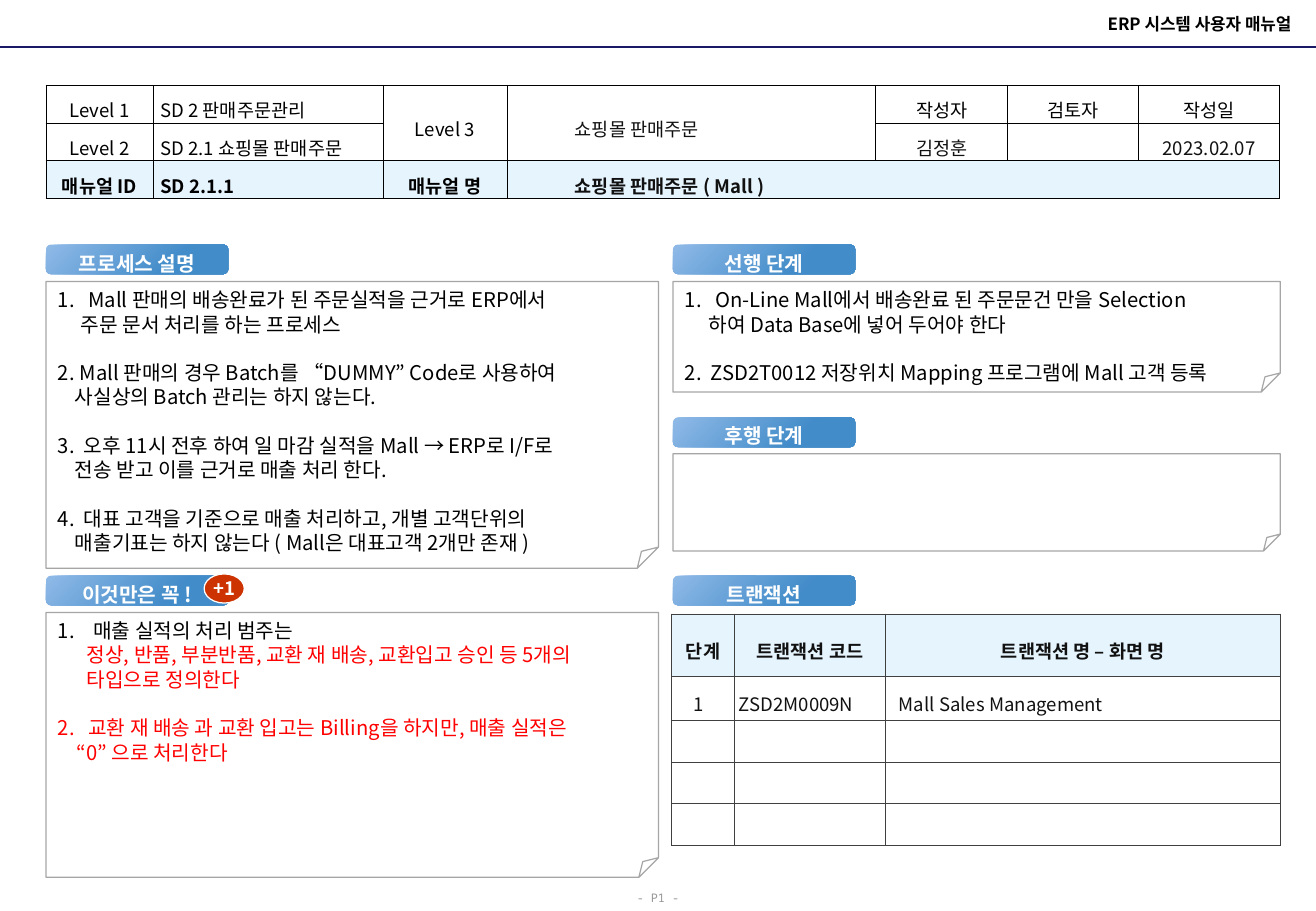
from lxml.etree import SubElement
from pptx import Presentation
from pptx.dml.color import RGBColor
from pptx.enum.shapes import MSO_CONNECTOR, MSO_SHAPE
from pptx.enum.text import MSO_ANCHOR, PP_ALIGN
from pptx.oxml.ns import qn
from pptx.oxml.xmlchemy import OxmlElement
from pptx.util import Pt

FONT, MONO = "Noto Sans CJK KR", "Noto Sans Mono"
COLORS = {"ink": "000000", "dark": "111111", "red": "FF0000", "white": "FFFFFF",
          "rule": "191966", "frame": "A6A6A6", "grid": "404040", "page": "969696",
          "tint": "E6F4FE", "tag_light": "90BAE8", "tag_deep": "428CC9", "badge": "CC3300"}
LEFT, CENTER, RIGHT = PP_ALIGN.LEFT, PP_ALIGN.CENTER, PP_ALIGN.RIGHT
LEFT_X, RIGHT_X, LEFT_W, RIGHT_W = 27.3, 398.9, 363, 360


def rgb(name):
    return RGBColor.from_string(COLORS[name])


def format_paragraph(p, size, color="ink", bold=False, align=LEFT, font=FONT, spacing=None):
    p.alignment = align
    if spacing:
        p.line_spacing = spacing
    for r in p.runs:
        r.font.size, r.font.bold = Pt(size), bold
        r.font.color.rgb = rgb(color)
        r.font.name = font
        SubElement(r.font._element, qn("a:ea"), typeface=font)


def set_margins(box, left, top, right, bottom):
    box.margin_left, box.margin_top = Pt(left), Pt(top)
    box.margin_right, box.margin_bottom = Pt(right), Pt(bottom)


def add_box(s, kind, x, y, w, h, line=None):
    sp = s.shapes.add_shape(kind, Pt(x), Pt(y), Pt(w), Pt(h))
    sp.shadow.inherit = False
    sp.fill.background()
    if line:
        sp.line.color.rgb = rgb(line)
        sp.line.width = Pt(0.75)
    else:
        sp.line.fill.background()
    return sp


def add_header(s):
    title = s.shapes.title
    title.left, title.top, title.width, title.height = Pt(434.9), Pt(4.3), Pt(337.7), Pt(19.4)
    tf = title.text_frame
    tf.text = "ERP 시스템 사용자 매뉴얼"
    tf.vertical_anchor = MSO_ANCHOR.MIDDLE
    format_paragraph(tf.paragraphs[0], 10, bold=True, align=RIGHT)
    rule = s.shapes.add_connector(MSO_CONNECTOR.STRAIGHT, 0, Pt(28), Pt(780), Pt(28))
    rule.line.color.rgb = rgb("rule")
    rule.line.width = Pt(1.5)
    SubElement(rule._element.spPr, qn("a:effectLst"))


def add_page_number(s):
    tf = s.shapes.add_textbox(Pt(370), Pt(522), Pt(40), Pt(18)).text_frame
    tf.word_wrap = True
    tf.text = "- P1 -"
    set_margins(tf, 0, 3.6, 0, 3.6)
    format_paragraph(tf.paragraphs[0], 7, "page", align=CENTER, font=MONO, spacing=1.3)


def add_tag(s, x, y, label):
    sp = add_box(s, MSO_SHAPE.ROUNDED_RECTANGLE, x, y, 108, 17.5)
    sp.fill.gradient()
    sp.fill.gradient_angle = 315
    for stop, color, position in zip(sp.fill.gradient_stops, ("tag_light", "tag_deep"), (0, 0.7)):
        stop.color.rgb = rgb(color)
        stop.position = position
    tf = sp.text_frame
    tf.text = label
    tf.vertical_anchor = MSO_ANCHOR.MIDDLE
    set_margins(tf, 0, 0, 0, 2.9)
    format_paragraph(tf.paragraphs[0], 12, "white", True, CENTER, spacing=1.5)


def add_badge(s, x, y, label):
    sp = add_box(s, MSO_SHAPE.OVAL, x, y, 23.8, 17.3, "white")
    sp.fill.solid()
    sp.fill.fore_color.rgb = rgb("badge")
    tf = sp.text_frame
    tf.text = label
    tf.word_wrap = False
    tf.vertical_anchor = MSO_ANCHOR.MIDDLE
    set_margins(tf, 0, 0, 0, 0)
    format_paragraph(tf.paragraphs[0], 11, "white", True, CENTER)


def add_note(s, x, y, w, h, fold, items=()):
    """Items are (text indent, indent of later lines, [(line, color), ...]), numbered from 1."""
    sp = add_box(s, MSO_SHAPE.FOLDED_CORNER, x, y, w, h, "frame")
    guides = sp._element.spPr.find(qn("a:prstGeom")).find(qn("a:avLst"))
    guides.clear()
    SubElement(guides, qn("a:gd"), name="adj", fmla=f"val {round(fold * 100000)}")
    tf = sp.text_frame
    tf.vertical_anchor = MSO_ANCHOR.TOP
    set_margins(tf, 7.2, 3.6, 7.2, 3.6)
    for number, (hang, later, lines) in enumerate(items, 1):
        for i, (line, color) in enumerate(lines):
            first = number == 1 and i == 0
            p = tf.paragraphs[0] if first else tf.add_paragraph()
            p.text = line
            pPr = p._p.get_or_add_pPr()
            pPr.set("marL", str(Pt(later if i else hang)))
            pPr.set("indent", str(0 if i else -Pt(hang)))
            if i == 0:
                SubElement(pPr, qn("a:buFont"), typeface=FONT)
                SubElement(pPr, qn("a:buAutoNum"), type="arabicPeriod", startAt=str(number))
                if not first:
                    p.space_before = Pt(14.4)
            format_paragraph(p, 12, color, spacing=Pt(14.4))


def add_borders(cell, color):
    tcPr = cell._tc.get_or_add_tcPr()
    for i, side in enumerate(("lnL", "lnR", "lnT", "lnB")):
        ln = OxmlElement(f"a:{side}")
        ln.set("w", str(Pt(0.5)))
        SubElement(SubElement(ln, qn("a:solidFill")), qn("a:srgbClr"), val=COLORS[color])
        tcPr.insert(i, ln)


def add_grid(s, x, y, cols, rows, border, tinted_row):
    table = s.shapes.add_table(len(rows), len(cols), Pt(x), Pt(y), Pt(sum(cols)), Pt(sum(rows))).table
    table.first_row = table.horz_banding = False
    for col, w in zip(table.columns, cols):
        col.width = Pt(w)
    for i, (row, h) in enumerate(zip(table.rows, rows)):
        row.height = Pt(h)
        for cell in row.cells:
            cell.fill.solid()
            cell.fill.fore_color.rgb = rgb("tint" if i == tinted_row else "white")
            add_borders(cell, border)
            set_margins(cell, 0, 0, 0, 0)
            SubElement(cell.text_frame.paragraphs[0]._p, qn("a:endParaRPr"), sz="1100")
    return table


def fill_cell(cell, text, align=CENTER, left=4.3, color="ink", bold=False, pad=(1.6, 0)):
    cell.text = text
    cell.vertical_anchor = MSO_ANCHOR.MIDDLE
    set_margins(cell, left, pad[0], 4.3, pad[1])
    format_paragraph(cell.text_frame.paragraphs[0], 11, color, bold, align, spacing=1.3)


def add_document_table(s, x, y):
    table = add_grid(s, x, y, (63.4, 136.3, 73.5, 218.7, 78.2, 77.6, 83.6), (19, 19, 22.6), "ink", 2)
    for column in (2, 3):
        table.cell(0, column).merge(table.cell(1, column))
    table.cell(2, 3).merge(table.cell(2, 6))
    rows = (("Level 1", "SD 2 판매주문관리", "Level 3", "쇼핑몰 판매주문", "작성자", "검토자", "작성일"),
            ("Level 2", "SD 2.1 쇼핑몰 판매주문", "", "", "김정훈", "", "2023.02.07"),
            ("매뉴얼 ID", "SD 2.1.1", "매뉴얼 명", "쇼핑몰 판매주문 ( Mall )"))
    for i, row in enumerate(rows):
        for j, text in enumerate(row):
            if text:
                dark = j == 3 or (i == 1 and j > 3)
                fill_cell(table.cell(i, j), text, LEFT if j in (1, 3) else CENTER,
                          40.3 if j == 3 else 4.3, "dark" if dark else "ink", i == 2)


def add_transaction_table(s, x, y):
    table = add_grid(s, x, y, (37.4, 89.5, 234), (36.7, 24.4, 24.7, 24.7, 24.7), "grid", 0)
    for j, text in enumerate(("단계", "트랜잭션 코드", "트랜잭션 명 – 화면 명")):
        fill_cell(table.cell(0, j), text, color="dark", bold=True, pad=(3.6, 2))
    for j, (text, left) in enumerate((("1", 12.9), ("ZSD2M0009N", 2.5), ("Mall Sales Management", 7.9))):
        fill_cell(table.cell(1, j), text, LEFT, left, "dark", pad=(3.6, 2))


def main():
    prs = Presentation()
    prs.slide_width, prs.slide_height = Pt(780), Pt(540)
    s = prs.slides.add_slide(prs.slide_layouts[5])
    add_header(s)
    add_document_table(s, LEFT_X, 50.5)
    for x, y, label in ((LEFT_X, 145, "프로세스 설명"), (RIGHT_X, 145, "선행 단계"),
                        (RIGHT_X, 247.5, "후행 단계"), (LEFT_X, 341.3, "이것만은 꼭 !"),
                        (RIGHT_X, 341.3, "트랜잭션")):
        add_tag(s, x, y, label)
    add_badge(s, 121, 340.2, "+1")
    add_note(s, LEFT_X, 166.9, LEFT_W, 170, 0.074, (
        (18, 13.6, [("Mall 판매의 배송완료가 된 주문실적을 근거로 ERP에서", "ink"),
                    ("주문 문서 처리를 하는 프로세스", "ink")]),
        (13, 10, [("Mall 판매의 경우 Batch를 “DUMMY” Code로 사용하여", "ink"),
                  ("사실상의 Batch 관리는 하지 않는다.", "ink")]),
        (15.4, 10, [("오후 11시 전후 하여 일 마감 실적을 Mall → ERP로 I/F로", "ink"),
                    ("전송 받고 이를 근거로 매출 처리 한다.", "ink")]),
        (15.4, 10, [("대표 고객을 기준으로 매출 처리하고, 개별 고객단위의", "ink"),
                    ("매출기표는 하지 않는다 ( Mall은 대표고객 2개만 존재 )", "ink")])))
    add_note(s, RIGHT_X, 166.9, RIGHT_W, 65.5, 0.173, (
        (18, 14, [("On-Line Mall에서 배송완료 된 주문문건 만을 Selection", "ink"),
                  ("하여 Data Base에 넣어 두어야 한다", "ink")]),
        (15.4, 14, [("ZSD2T0012 저장위치 Mapping 프로그램에 Mall 고객 등록", "ink")])))
    add_note(s, RIGHT_X, 269, RIGHT_W, 57.6, 0.173)
    add_note(s, LEFT_X, 363, LEFT_W, 157, 0.074, (
        (21, 17, [("매출 실적의 처리 범주는", "ink"),
                  ("정상, 반품, 부분반품, 교환 재 배송, 교환입고 승인 등 5개의", "red"),
                  ("타입으로 정의한다", "red")]),
        (18, 11, [("교환 재 배송 과 교환 입고는 Billing을 하지만, 매출 실적은", "red"),
                  ("“0” 으로 처리한다", "red")])))
    add_transaction_table(s, 398, 364)
    add_page_number(s)
    prs.save("out.pptx")


if __name__ == "__main__":
    main()
